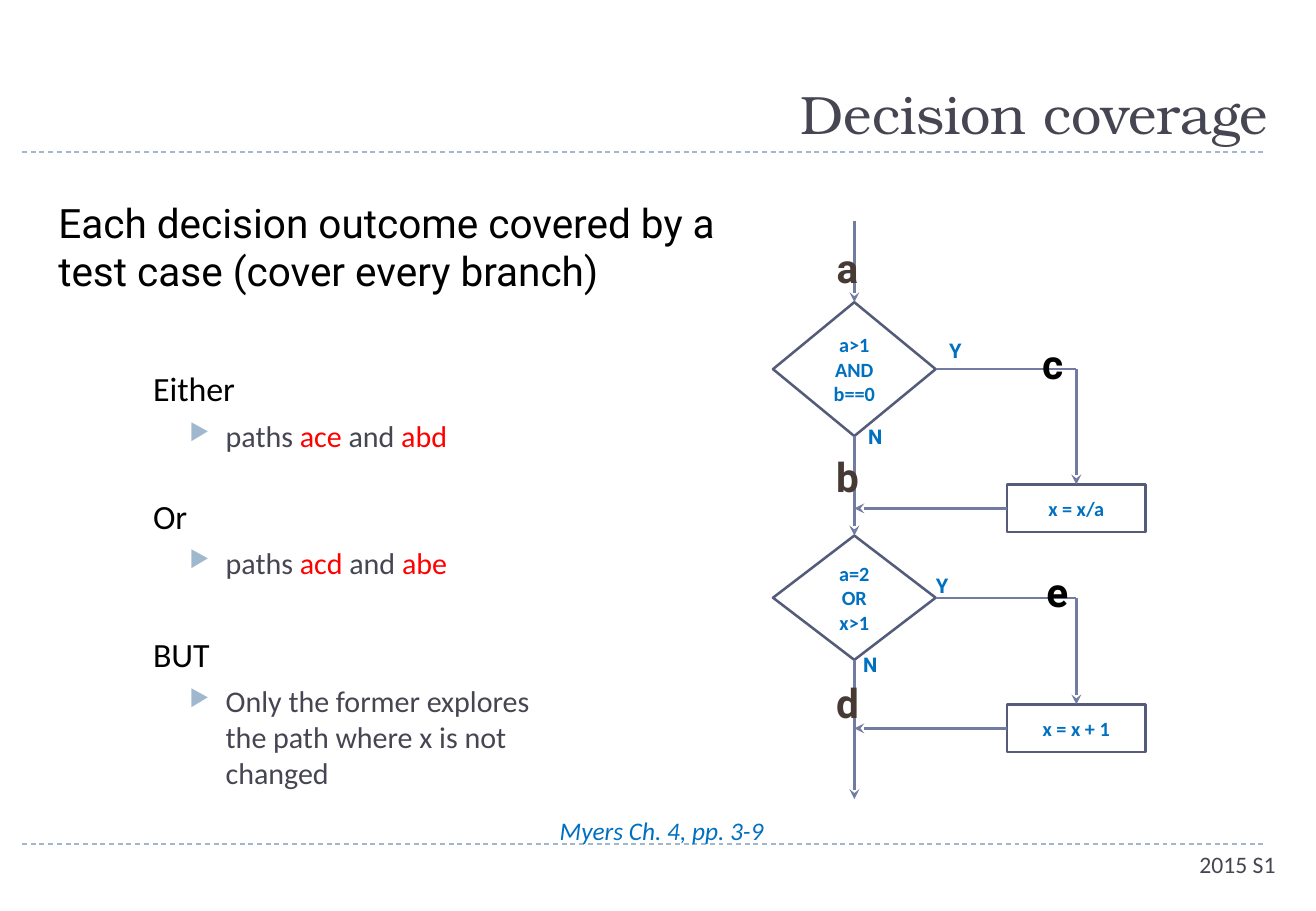
from dataclasses import dataclass

from lxml import etree
from pptx import Presentation
from pptx.dml.color import RGBColor
from pptx.enum.dml import MSO_LINE
from pptx.enum.shapes import MSO_CONNECTOR, MSO_SHAPE
from pptx.enum.text import MSO_ANCHOR, MSO_AUTO_SIZE, PP_ALIGN
from pptx.oxml.ns import qn
from pptx.util import Cm, Pt

STRAIGHT = MSO_CONNECTOR.STRAIGHT
DASH = MSO_LINE.DASH
DECISION, PROCESS = MSO_SHAPE.FLOWCHART_DECISION, MSO_SHAPE.FLOWCHART_PROCESS
LEFT, CENTER, RIGHT = PP_ALIGN.LEFT, PP_ALIGN.CENTER, PP_ALIGN.RIGHT
TOP, MIDDLE, BOTTOM = MSO_ANCHOR.TOP, MSO_ANCHOR.MIDDLE, MSO_ANCHOR.BOTTOM
NO_AUTOFIT = MSO_AUTO_SIZE.NONE


@dataclass(frozen=True)
class Theme:
    serif: str = "TeX Gyre Bonum"
    sans: str = "Calibri"
    label: str = "Roboto"
    white: str = "FFFFFF"
    black: str = "000000"
    grey: str = "464653"
    brown: str = "473A35"
    red: str = "FF0000"
    blue: str = "0070C0"
    rule: str = "9FB8CD"
    outline: str = "545C79"
    arrow: str = "727CA3"
    title_size: float = 32
    large: float = 24
    case_size: float = 20.1
    path_size: float = 17.8
    citation_size: float = 15
    footer_size: float = 14
    small: float = 12


THEME = Theme()


@dataclass(frozen=True)
class Run:
    text: str
    size: float
    color: str
    font: str = THEME.sans
    bold: bool = False
    italic: bool = False


@dataclass(frozen=True)
class Para:
    runs: list[Run]
    align: PP_ALIGN = LEFT
    before: float = 0
    indent: float = 0
    bullet: bool = False


@dataclass(frozen=True)
class Step:
    """A decision and the action on its Y branch (cm)."""
    condition: list[str]
    top: float
    height: float
    action: str
    action_top: float

    @property
    def middle(self) -> float:
        return self.top + self.height / 2

    @property
    def bottom(self) -> float:
        return self.top + self.height


@dataclass(frozen=True)
class Label:
    text: str
    left: float
    top: float
    color: str
    size: float


# Flowchart columns and sizes (cm)
MAIN_X, BRANCH_X = 17.86, 22.5
DECISION_W, ACTION_W, ACTION_H = 3.4, 2.9, 1.0
FLOW_TOP, FLOW_BOTTOM = 4.62, 16.71
LABEL_W, LABEL_H = 1.09, 1.02

STEPS = [
    Step(["a>1", "AND", "b==0"], 6.32, 2.8, "x = x/a", 10.13),
    Step(["a=2", "OR", "x>1"], 11.2, 2.6, "x = x + 1", 14.73),
]
LABELS = [
    Label("a", 17.17, 4.95, THEME.brown, THEME.large),
    Label("b", 17.17, 9.32, THEME.brown, THEME.large),
    Label("d", 17.17, 14.05, THEME.brown, THEME.large),
    Label("c", 21.46, 6.96, THEME.black, THEME.large),
    Label("e", 21.56, 11.73, THEME.black, THEME.large),
    Label("Y", 19.43, 6.96, THEME.blue, THEME.small),
    Label("Y", 19.15, 11.86, THEME.blue, THEME.small),
    Label("N", 17.75, 8.74, THEME.blue, THEME.small),
    Label("N", 17.65, 13.51, THEME.blue, THEME.small),
]


def write(tf, paras: list[Para], anchor=TOP) -> None:
    tf.word_wrap = True
    tf.auto_size = NO_AUTOFIT
    tf.vertical_anchor = anchor
    for i, para in enumerate(paras):
        p = tf.add_paragraph() if i else tf.paragraphs[0]
        p.alignment = para.align
        p.space_before = Pt(para.before)
        pPr = p._p.get_or_add_pPr()
        pPr.set("marL", str(Cm(para.indent)))
        pPr.set("indent", str(Cm(-0.76) if para.bullet else 0))
        if para.bullet:
            color = etree.SubElement(pPr, qn("a:buClr"))
            etree.SubElement(color, qn("a:srgbClr"), val=THEME.rule)
            etree.SubElement(pPr, qn("a:buSzPct"), val="76000")
            etree.SubElement(pPr, qn("a:buChar"), char="▶")
        for run in para.runs:
            r = p.add_run()
            r.text = run.text
            r.font.name, r.font.size = run.font, Pt(run.size)
            r.font.bold, r.font.italic = run.bold, run.italic
            r.font.color.rgb = RGBColor.from_string(run.color)


def add_text(s, left: float, top: float, width: float, height: float,
             paras: list[Para]) -> None:
    box = s.shapes.add_textbox(Cm(left), Cm(top), Cm(width), Cm(height))
    write(box.text_frame, paras)


def add_line(s, x1: float, y1: float, x2: float, y2: float,
             color: str = THEME.arrow, width: float = 1.5,
             dashed: bool = False, arrow: bool = False) -> None:
    line = s.shapes.add_connector(STRAIGHT, Cm(x1), Cm(y1), Cm(x2), Cm(y2))
    line.line.color.rgb = RGBColor.from_string(color)
    line.line.width = Pt(width)
    if dashed:
        line.line.dash_style = DASH
    if arrow:
        etree.SubElement(line.line._get_or_add_ln(), qn("a:tailEnd"), type="stealth")
    etree.SubElement(line._element.spPr, qn("a:effectLst"))


def add_node(s, kind, top: float, center: float, width: float, height: float,
             lines: list[str]) -> None:
    sp = s.shapes.add_shape(kind, Cm(center - width / 2), Cm(top), Cm(width), Cm(height))
    sp.shadow.inherit = False
    sp.fill.solid()
    sp.fill.fore_color.rgb = RGBColor.from_string(THEME.white)
    sp.line.color.rgb = RGBColor.from_string(THEME.outline)
    sp.line.width = Pt(1.5)
    tf = sp.text_frame
    tf.margin_left = tf.margin_right = tf.margin_top = tf.margin_bottom = 0
    write(tf, [Para([Run(t, THEME.small, THEME.blue, bold=True)], CENTER)
               for t in lines], MIDDLE)


def case(text: str, before: float = 0) -> Para:
    return Para([Run(text, THEME.case_size, THEME.black)], before=before)


def detail(*parts: str) -> Para:
    """Bullet whose every second part is a path name in red."""
    return Para([Run(t, THEME.path_size, THEME.red if i % 2 else THEME.grey)
                 for i, t in enumerate(parts)], before=5, indent=1.52, bullet=True)


def draw_flowchart(s) -> None:
    for step in STEPS:
        add_node(s, DECISION, step.top, MAIN_X, DECISION_W, step.height, step.condition)
        add_node(s, PROCESS, step.action_top, BRANCH_X, ACTION_W, ACTION_H, [step.action])
    # Main flow
    starts = [FLOW_TOP] + [step.bottom for step in STEPS]
    ends = [step.top for step in STEPS] + [FLOW_BOTTOM]
    for start, end in zip(starts, ends):
        add_line(s, MAIN_X, start, MAIN_X, end, arrow=True)
    # Branches out and back
    for step in STEPS:
        back_y = step.action_top + ACTION_H / 2
        add_line(s, MAIN_X + DECISION_W / 2, step.middle, BRANCH_X, step.middle)
        add_line(s, BRANCH_X, step.middle, BRANCH_X, step.action_top, arrow=True)
        add_line(s, BRANCH_X - ACTION_W / 2, back_y, MAIN_X, back_y, arrow=True)
    for label in LABELS:
        run = Run(label.text, label.size, label.color, THEME.label, bold=True)
        add_text(s, label.left, label.top, LABEL_W, LABEL_H, [Para([run], CENTER)])


def main() -> None:
    prs = Presentation()
    prs.slide_width, prs.slide_height = Cm(27.51), Cm(19.05)
    s = prs.slides.add_slide(prs.slide_layouts[5])

    # Title, rules and footer
    title = s.shapes.title
    title.left, title.top, title.width, title.height = Cm(2.51), Cm(0.43), Cm(24.26), Cm(2.74)
    write(title.text_frame, [Para([Run("Decision coverage", THEME.title_size, THEME.grey,
                                       THEME.serif)], RIGHT)], BOTTOM)
    for y in (3.18, 17.65):
        add_line(s, 0.46, y, 26.47, y, THEME.rule, 0.75, dashed=True)
    add_text(s, 20.04, 17.65, 6.88, 1.02,
             [Para([Run("2015 S1", THEME.footer_size, THEME.grey)], RIGHT)])
    add_text(s, 9.25, 16.92, 8.41, 1.19,
             [Para([Run("Myers Ch. 4, pp. 3-9", THEME.citation_size, THEME.blue,
                        italic=True)], CENTER, indent=0.76)])

    # Definition and cases
    add_text(s, 0.97, 4.01, 14.35, 2.31,
             [Para([Run("Each decision outcome covered by a test case (cover every branch)",
                        THEME.large, THEME.black, THEME.label)])])
    add_text(s, 2.95, 7.57, 8.5, 8.76, [
        case("Either"), detail("paths ", "ace", " and ", "abd"),
        case("Or", 25), detail("paths ", "acd", " and ", "abe"),
        case("BUT", 31.5),
        detail("Only the former explores the path where x is not changed"),
    ])

    draw_flowchart(s)
    prs.save("out.pptx")


if __name__ == "__main__":
    main()
